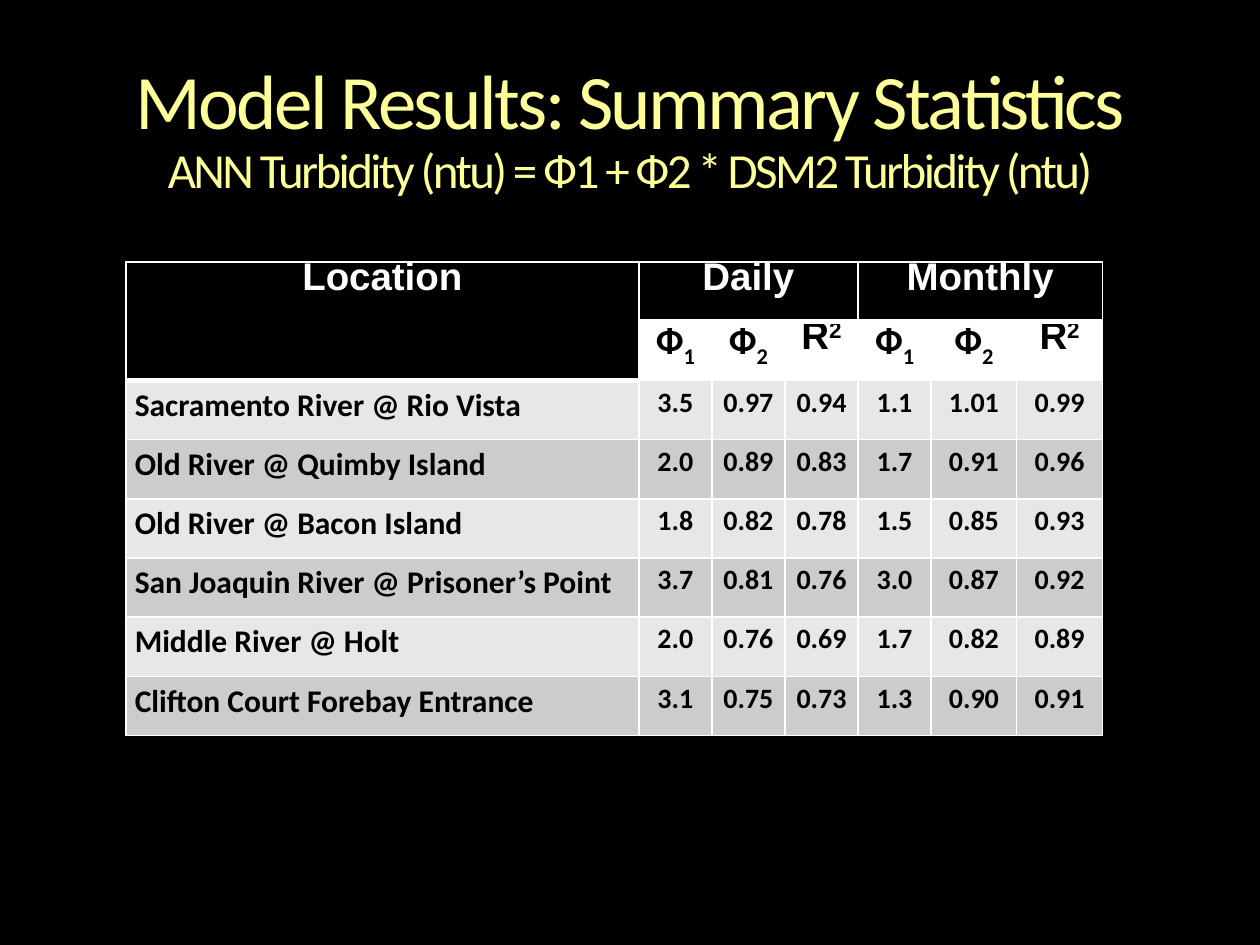
from pptx import Presentation
from pptx.dml.color import RGBColor
from pptx.enum.text import MSO_ANCHOR, MSO_AUTO_SIZE, PP_ALIGN
from pptx.oxml import parse_xml
from pptx.oxml.ns import nsdecls
from pptx.util import Inches, Pt

TITLE = [("Model Results: Summary Statistics", 44),
         ("ANN Turbidity (ntu) = Ф1 + Ф2 * DSM2 Turbidity (ntu)", 28)]
GROUPS = [("Location", 0, 1, 0), ("Daily", 1, 0, 2), ("Monthly", 4, 0, 2)]
STATS = [("Ф", "1", -25, "Calibri"), ("Ф", "2", -25, "Calibri"),
         ("R", "2", 30, "Arial")] * 2
SITES = [
    ("Sacramento River @ Rio Vista", "3.5", "0.97", "0.94", "1.1", "1.01", "0.99"),
    ("Old River @ Quimby Island", "2.0", "0.89", "0.83", "1.7", "0.91", "0.96"),
    ("Old River @ Bacon Island", "1.8", "0.82", "0.78", "1.5", "0.85", "0.93"),
    ("San Joaquin River @ Prisoner’s Point", "3.7", "0.81", "0.76", "3.0", "0.87", "0.92"),
    ("Middle River @ Holt", "2.0", "0.76", "0.69", "1.7", "0.82", "0.89"),
    ("Clifton Court Forebay Entrance", "3.1", "0.75", "0.73", "1.3", "0.90", "0.91"),
]
WIDTHS = [4.07, 0.58, 0.58, 0.58, 0.58, 0.68, 0.68]
ROW = 0.47
BANDS = ["E7E7E7", "CCCCCC"]
HEAD = {"line_spacing": 0.65, "space_after": Pt(6.6), "alignment": PP_ALIGN.CENTER}
BODY = {"line_spacing": 1.15, "alignment": PP_ALIGN.CENTER}
PAD = {"margin_left": Inches(0.07), "margin_right": Inches(0.07),
       "margin_top": 0, "margin_bottom": 0}


def tint(fmt, code):
    fmt.rgb = RGBColor.from_string(code)


def apply(obj, vals):
    for key, val in vals.items():
        setattr(obj, key, val)


def write(para, text, size, face, code, bold=True, **extra):
    run = para.add_run()
    run.text = text
    apply(run.font, {"size": Pt(size), "name": face, "bold": bold})
    tint(run.font.color, code)
    for key, val in extra.items():
        run._r.get_or_add_rPr().set(key, str(val))


def paint(cell, code, base=1):
    props = cell._tc.get_or_add_tcPr()
    for side, wide in zip("LRTB", (1, 1, 1, base)):
        props.append(parse_xml(
            f'<a:ln{side} {nsdecls("a")} w="{Pt(wide)}"><a:solidFill>'
            f'<a:srgbClr val="FFFFFF"/></a:solidFill></a:ln{side}>'))
    cell.fill.solid()
    tint(cell.fill.fore_color, code)


def add_title(slide):
    box = slide.shapes.title
    apply(box, {"left": 0, "top": Inches(0.5),
                "width": Inches(10), "height": Inches(1.09)})
    frame = box.text_frame
    apply(frame, dict.fromkeys(PAD, 0))
    apply(frame, {"word_wrap": True, "vertical_anchor": MSO_ANCHOR.TOP,
                  "auto_size": MSO_AUTO_SIZE.SHAPE_TO_FIT_TEXT})
    para = frame.paragraphs[0]
    apply(para, {"alignment": PP_ALIGN.CENTER, "line_spacing": 0.9})
    for num, (text, size) in enumerate(TITLE):
        if num:
            para.add_line_break()
        write(para, text, size, "Calibri", "FFFF99", False, spc=-150)


def add_grid(slide):
    rows = len(SITES) + 2
    grid = slide.shapes.add_table(
        rows, len(WIDTHS), Inches(1), Inches(2.08),
        Inches(sum(WIDTHS)), Inches(ROW * rows)).table
    for col, wide in zip(grid.columns, WIDTHS):
        col.width = Inches(wide)
    for row in grid.rows:
        row.height = Inches(ROW)

    for text, col, down, right in GROUPS:
        for r in range(down + 1):
            for c in range(col, col + right + 1):
                paint(grid.cell(r, c), "000000", 3)
        cell = grid.cell(0, col)
        cell.merge(grid.cell(down, col + right))
        para = cell.text_frame.paragraphs[0]
        apply(para, HEAD)
        write(para, text, 22, "Arial", "FFFFFF")

    for col, (sign, mark, shift, face) in enumerate(STATS, 1):
        cell = grid.cell(1, col)
        paint(cell, "FFFFFF")
        para = cell.text_frame.paragraphs[0]
        apply(para, HEAD)
        write(para, sign, 22, face, "000000")
        write(para, mark, 22, face, "000000", baseline=shift * 1000)

    for num, site in enumerate(SITES):
        for col, text in enumerate(site):
            cell = grid.cell(num + 2, col)
            paint(cell, BANDS[num % 2])
            apply(cell, PAD)
            para = cell.text_frame.paragraphs[0]
            apply(para, BODY)
            if col == 0:
                para.alignment = PP_ALIGN.LEFT
            write(para, text, 16 if col else 18, "Calibri", "000000")


def main():
    deck = Presentation()
    apply(deck, {"slide_width": Inches(10), "slide_height": Inches(7.5)})
    slide = deck.slides.add_slide(deck.slide_layouts[5])
    slide.background.fill.solid()
    tint(slide.background.fill.fore_color, "000000")
    add_title(slide)
    add_grid(slide)
    deck.save("out.pptx")


if __name__ == "__main__":
    main()
